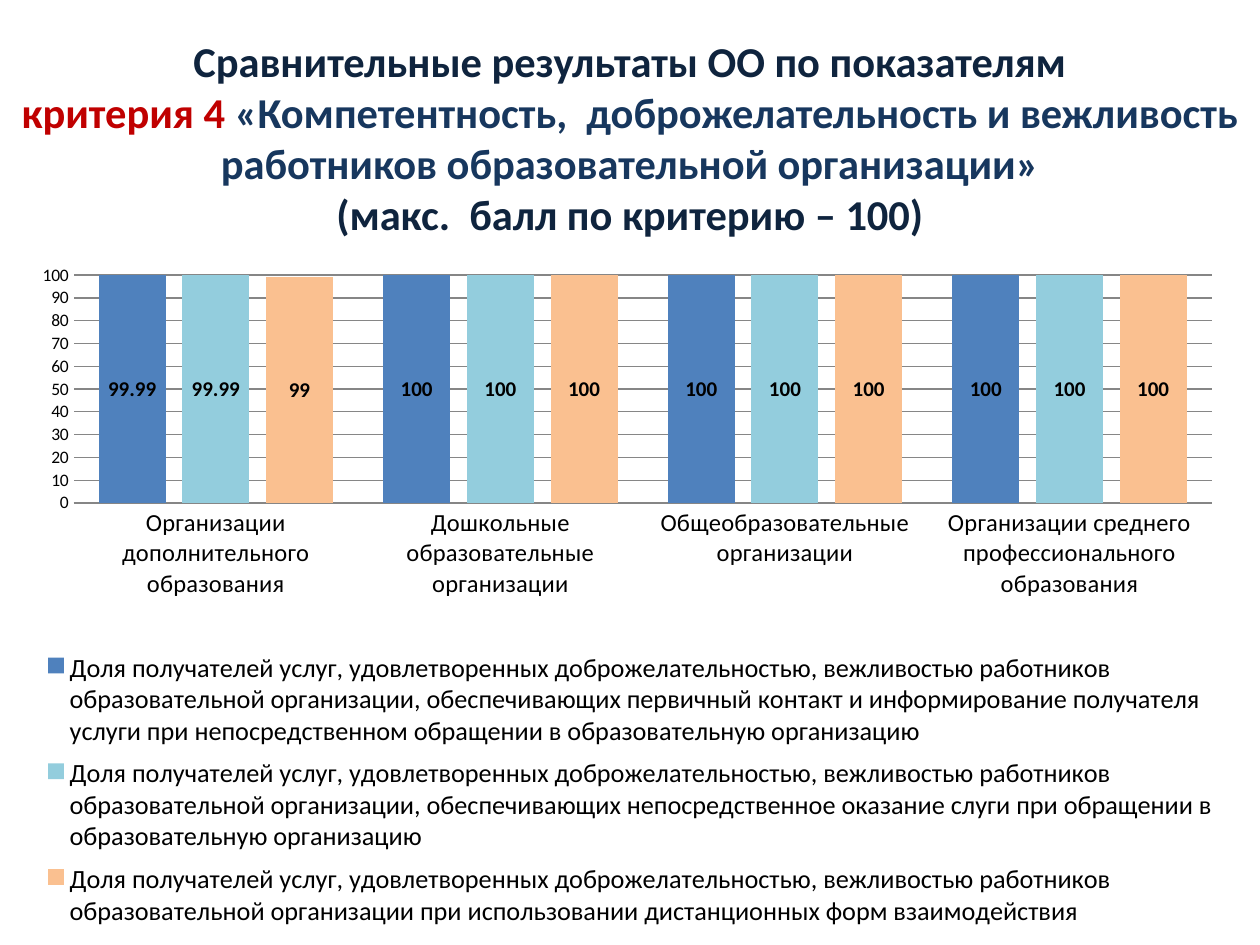
from lxml import etree
from pptx import Presentation
from pptx.chart.data import CategoryChartData
from pptx.dml.color import RGBColor
from pptx.enum.chart import XL_CHART_TYPE as Kind, XL_LABEL_POSITION as Spot
from pptx.enum.chart import XL_LEGEND_POSITION as Side, XL_TICK_MARK as Tick
from pptx.enum.text import MSO_ANCHOR as Anchor, PP_ALIGN as Align
from pptx.oxml.ns import qn
from pptx.util import Pt

FONT = "Calibri"
NAVY = RGBColor(0x0F, 0x24, 0x3E)
BLUE = RGBColor(0x17, 0x37, 0x5E)
RED = RGBColor(0xC0, 0x00, 0x00)
BLACK = RGBColor(0, 0, 0)
GRAY = RGBColor(0x86, 0x86, 0x86)

# Content
TITLE = [
    [("Сравнительные результаты ОО по показателям", NAVY)],
    [("критерия 4 ", RED),
     ("«Компетентность,  доброжелательность и вежливость", BLUE)],
    [("работников образовательной организации»", BLUE)],
    [("(макс.  балл по критерию – 100)", NAVY)],
]
CATS = [
    "Организации дополнительного образования",
    "Дошкольные образовательные организации",
    "Общеобразовательные организации",
    "Организации среднего профессионального образования",
]
LEAD = ("Доля получателей услуг, удовлетворенных доброжелательностью, "
        "вежливостью работников образовательной организации")
SERIES = [
    (LEAD + ", обеспечивающих первичный контакт и информирование получателя "
     "услуги при непосредственном обращении в образовательную организацию",
     (99.99, 100, 100, 100), RGBColor(0x4F, 0x81, 0xBD)),
    (LEAD + ", обеспечивающих непосредственное оказание слуги при обращении "
     "в образовательную организацию",
     (99.99, 100, 100, 100), RGBColor(0x93, 0xCD, 0xDD)),
    (LEAD + " при использовании дистанционных форм взаимодействия",
     (99, 100, 100, 100), RGBColor(0xFA, 0xC0, 0x90)),
]


def set_font(font, size, color=BLACK, bold=False):
    font.name, font.size, font.bold = FONT, Pt(size), bold
    font.color.rgb = color


def place(part, after, box, inner=False):
    """Fix a chart part at box: left, top, width, height as shares of the chart."""
    for old in part.findall(qn("c:layout")):
        part.remove(old)
    layout = etree.Element(qn("c:layout"))
    manual = etree.SubElement(layout, qn("c:manualLayout"))
    rules = [("layoutTarget", "inner")] if inner else []
    rules += [("xMode", "edge"), ("yMode", "edge"), *zip("xywh", box)]
    for tag, val in rules:
        etree.SubElement(manual, qn("c:" + tag)).set("val", str(val))
    if after is None:
        part.insert(0, layout)
    else:
        after.addnext(layout)


deck = Presentation()
deck.slide_width, deck.slide_height = Pt(720), Pt(540)
slide = deck.slides.add_slide(deck.slide_layouts[6])

# Title
frame = slide.shapes.add_textbox(Pt(0), Pt(8), Pt(720), Pt(140)).text_frame
frame.word_wrap = True
frame.vertical_anchor = Anchor.MIDDLE
frame.margin_left = frame.margin_right = Pt(0)
for i, line in enumerate(TITLE):
    para = frame.add_paragraph() if i else frame.paragraphs[0]
    para.alignment = Align.CENTER
    for words, color in line:
        run = para.add_run()
        run.text = words
        set_font(run.font, 24.3, color, True)

# Chart
data = CategoryChartData()
data.categories = CATS
for name, vals, _ in SERIES:
    data.add_series(name, vals)
chart = slide.shapes.add_chart(Kind.COLUMN_CLUSTERED, Pt(14.4), Pt(145.4),
                               Pt(692), Pt(394.6), data).chart
chart.has_title = False
set_font(chart.font, 10)

# Columns and their labels
plot = chart.plots[0]
plot.gap_width, plot.overlap, plot.vary_by_categories = 75, -25, False
for ser, (_, _, color) in zip(plot.series, SERIES):
    ser.format.fill.solid()
    ser.format.fill.fore_color.rgb = color
    labels = ser.data_labels
    labels.show_value = True
    labels.position = Spot.CENTER
    set_font(labels.font, 12, bold=True)

# Axes
cat, val = chart.category_axis, chart.value_axis
for axis, size in ((cat, 14), (val, 10)):
    axis.major_tick_mark = axis.minor_tick_mark = Tick.NONE
    set_font(axis.tick_labels.font, size)
val.minimum_scale, val.maximum_scale, val.major_unit = 0, 100, 10
val.has_major_gridlines = True
val.format.line.fill.background()
for line in (cat.format.line, val.major_gridlines.format.line):
    line.color.rgb = GRAY
    line.width = Pt(0.75)

# Legend
chart.has_legend = True
legend = chart.legend
legend.position = Side.BOTTOM
legend.include_in_layout = False
set_font(legend.font, 15)

# Places of the plot and the legend
area = chart.element.find(".//" + qn("c:plotArea"))
key = chart.element.find(".//" + qn("c:legend"))
place(area, None, (0.04, 0.03, 0.94, 0.33), inner=True)
place(key, key.find(qn("c:legendPos")), (0.01, 0.56, 0.98, 0.43))

deck.save("out.pptx")
